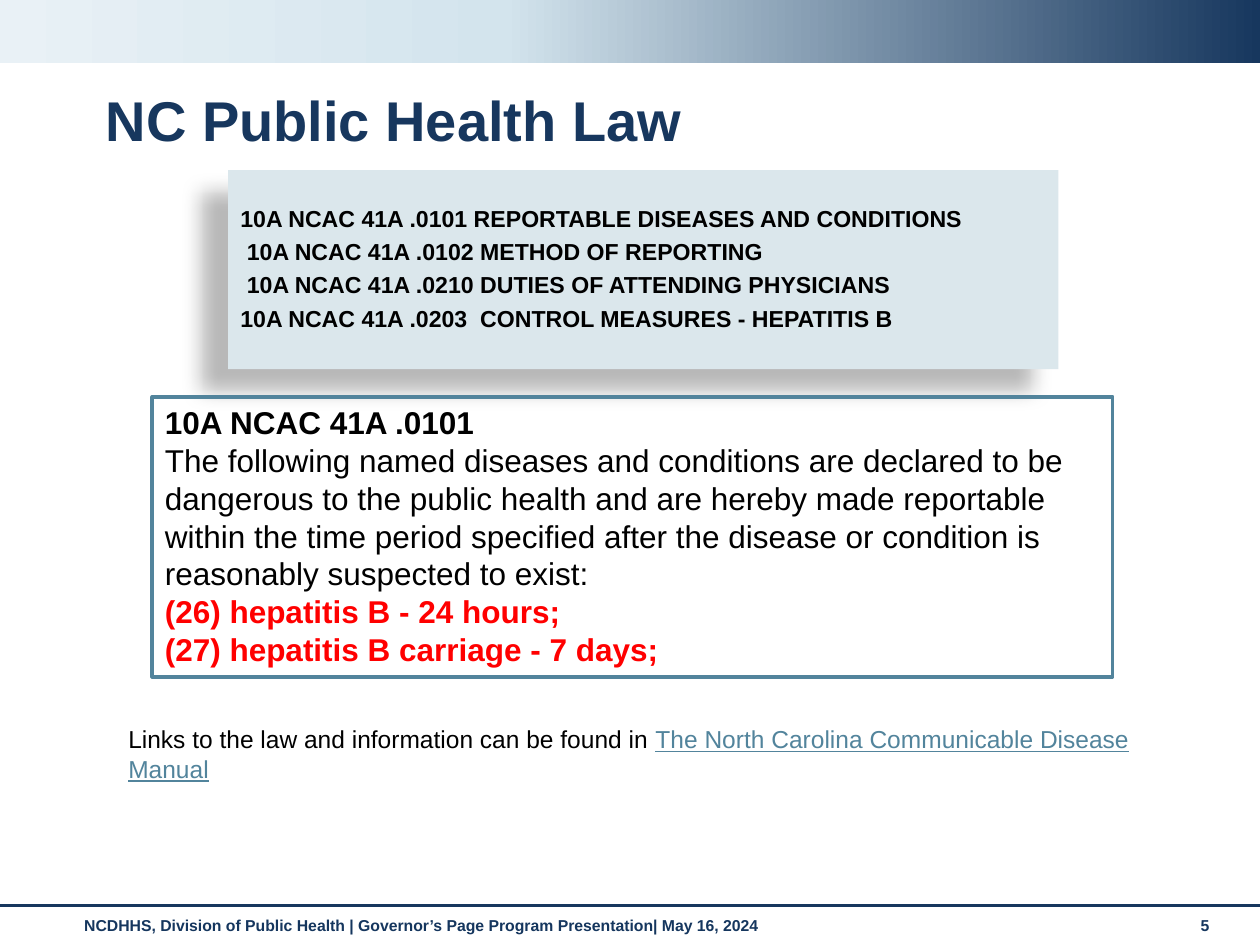
from lxml import etree
from pptx import Presentation
from pptx.dml.color import RGBColor
from pptx.enum.shapes import MSO_CONNECTOR, MSO_SHAPE
from pptx.enum.text import MSO_ANCHOR
from pptx.oxml.ns import qn
from pptx.util import Inches, Pt

RECT, STRAIGHT = MSO_SHAPE.RECTANGLE, MSO_CONNECTOR.STRAIGHT
TOP, MIDDLE = MSO_ANCHOR.TOP, MSO_ANCHOR.MIDDLE
FONT = "Arial"
W, H = 10, 7.5
C = {"navy": "17375E", "footer": "15365E", "panel": "DBE7EC", "teal": "52849C",
     "black": "000000", "red": "FF0000"}
BAND_STOPS = [(0, "17375E"), (60, "D3E4ED"), (100, "E9F1F6")]

# Each paragraph is a list of runs: (text, colour, bold, underline)
TITLE = [[("NC Public Health Law", "navy", True, False)]]
RULES = [[(text, "black", True, False)] for text in (
    "10A NCAC 41A .0101 REPORTABLE DISEASES AND CONDITIONS",
    " 10A NCAC 41A .0102 METHOD OF REPORTING",
    " 10A NCAC 41A .0210 DUTIES OF ATTENDING PHYSICIANS",
    "10A NCAC 41A .0203  CONTROL MEASURES ‑ HEPATITIS B",
)]
EXCERPT = [
    [("10A NCAC 41A .0101", "black", True, False)],
    [("The following named diseases and conditions are declared to be dangerous "
      "to the public health and are hereby made reportable within the time period "
      "specified after the disease or condition is reasonably suspected to exist:",
      "black", False, False)],
    [("(26) hepatitis B - 24 hours;", "red", True, False)],
    [("(27) hepatitis B carriage - 7 days;", "red", True, False)],
]
LINKS = [[("Links to the law and information can be found in ", "black", False, False),
          ("The North Carolina Communicable Disease Manual", "teal", False, True)]]
FOOTER = [[("NCDHHS, Division of Public Health | Governor’s Page Program Presentation"
            "| May 16, 2024", "footer", True, False)]]
PAGE = [[("5", "footer", True, False)]]


def rgb(name):
    return RGBColor.from_string(C[name])


def add_rect(slide, box):
    sp = slide.shapes.add_shape(RECT, *map(Inches, box))
    sp.shadow.inherit = False
    sp.fill.background()
    sp.line.fill.background()
    return sp


def add_box(slide, box):
    return slide.shapes.add_textbox(*map(Inches, box))


def write(sp, paragraphs, size, anchor=TOP, spacing=1.0, before=0, top=0.05):
    tf = sp.text_frame
    tf.word_wrap = True
    tf.vertical_anchor = anchor
    tf.margin_top = Inches(top)
    for i, runs in enumerate(paragraphs):
        p = tf.add_paragraph() if i else tf.paragraphs[0]
        p.alignment = 1  # left
        p.line_spacing = spacing
        p.space_before = Pt(before if i else 0)
        for text, color, bold, underline in runs:
            r = p.add_run()
            r.text = text
            r.font.name, r.font.size = FONT, Pt(size)
            r.font.bold, r.font.underline = bold, underline
            r.font.color.rgb = rgb(color)


def set_gradient(sp, stops, angle):
    sp.fill.gradient()
    sp.fill.gradient_angle = angle
    gs_list = sp.element.spPr.find(".//" + qn("a:gsLst"))
    for gs in list(gs_list):
        gs_list.remove(gs)
    for pos, color in stops:
        gs = etree.SubElement(gs_list, qn("a:gs"), pos=str(pos * 1000))
        etree.SubElement(gs, qn("a:srgbClr"), val=color)


def set_shadow(sp, blur, dist, angle, alpha):
    effects = sp.element.spPr.find(qn("a:effectLst"))
    shadow = etree.SubElement(
        effects, qn("a:outerShdw"), blurRad=str(Pt(blur)), dist=str(Pt(dist)),
        dir=str(angle * 60000), algn="ctr", rotWithShape="0")
    color = etree.SubElement(shadow, qn("a:srgbClr"), val=C["black"])
    etree.SubElement(color, qn("a:alpha"), val=str(alpha * 1000))


def main():
    prs = Presentation()
    prs.slide_width, prs.slide_height = Inches(W), Inches(H)
    slide = prs.slides.add_slide(prs.slide_layouts[6])

    write(add_box(slide, (0.57, 7.22, 8.74, 0.29)), FOOTER, 9)
    write(add_box(slide, (9.43, 7.22, 0.44, 0.3)), PAGE, 9)

    band = add_rect(slide, (0, 0, W, 0.5))
    set_gradient(band, BAND_STOPS, 180)

    rule = slide.shapes.add_connector(
        STRAIGHT, 0, Inches(7.19), Inches(W), Inches(7.19))
    rule.line.color.rgb = rgb("navy")
    rule.line.width = Pt(1.75)
    etree.SubElement(rule.element.spPr, qn("a:effectLst"))

    write(add_box(slide, (0.74, 0.68, 8.58, 0.6)), TITLE, 32, MIDDLE, 0.9)

    panel = add_rect(slide, (1.81, 1.35, 6.59, 1.58))
    panel.fill.solid()
    panel.fill.fore_color.rgb = rgb("panel")
    set_shadow(panel, 11.8, 19.7, 141, 28)
    write(panel, RULES, 13.2, spacing=0.7, before=8, top=0.33)

    excerpt = add_rect(slide, (1.21, 3.15, 7.62, 2.22))
    excerpt.line.color.rgb = rgb("teal")
    excerpt.line.width = Pt(2.25)
    write(excerpt, EXCERPT, 18)

    write(add_box(slide, (0.92, 5.7, 8.5, 0.57)), LINKS, 14)
    prs.save("out.pptx")


if __name__ == "__main__":
    main()
